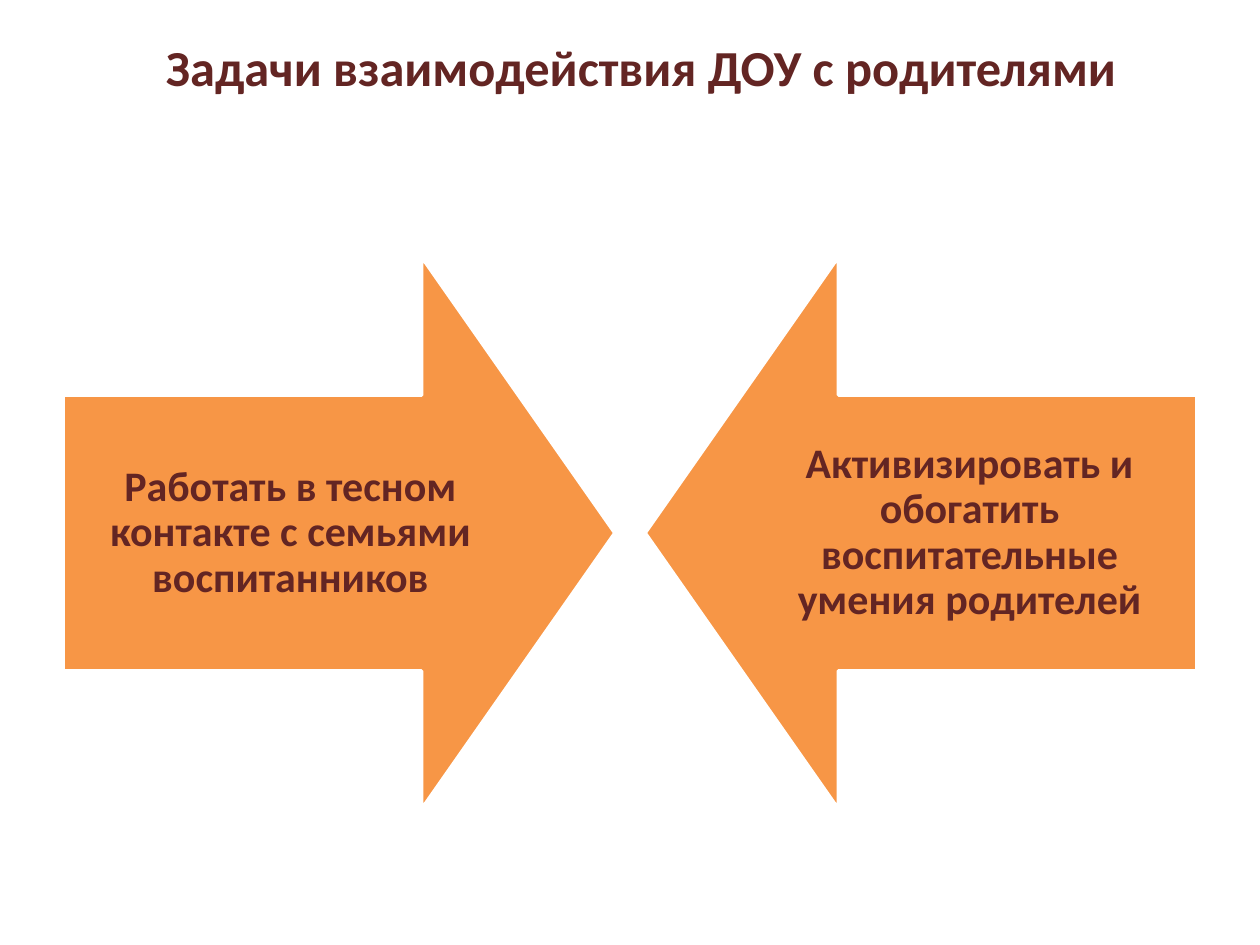
from pptx import Presentation
from pptx import util as u
from pptx.dml.color import RGBColor
from pptx.enum import shapes, text

DARK_RED = "632523"
ORANGE = "F79646"
WHITE = "FFFFFF"
ARROW_SIZE = 4.38
ARROW_TOP = 2.04
LABEL_WIDTH, LABEL_HEIGHT = 3.61, 2.19
LABEL_TOP = ARROW_TOP + (ARROW_SIZE - LABEL_HEIGHT) / 2

TASKS = [
    {"wording": "Работать в тесном контакте с семьями воспитанников",
     "arrow_left": 0.5, "label_left": 0.5, "rotation": 270},
    {"wording": "Активизировать и обогатить воспитательные умения родителей",
     "arrow_left": 5.12, "label_left": 5.89, "rotation": 90},
]


def rgb(value):
    """Return the colour for a hex string."""
    return RGBColor.from_string(value)


def apply(target, values):
    """Set every attribute in a dict of format values."""
    for name, value in values.items():
        setattr(target, name, value)


def box(left, top, width, height):
    """Return a position and size given in inches."""
    return [u.Inches(length) for length in (left, top, width, height)]


def write(frame, wording, size):
    """Fill a text frame with one centred, bold, dark red paragraph."""
    apply(frame, {"word_wrap": True, "auto_size": text.MSO_AUTO_SIZE.NONE,
                  "vertical_anchor": text.MSO_ANCHOR.MIDDLE})
    paragraph = frame.paragraphs[0]
    paragraph.alignment = text.PP_ALIGN.CENTER
    run = paragraph.add_run()
    run.text = wording
    apply(run.font, {"name": "Calibri", "size": u.Pt(size), "bold": True})
    run.font.color.rgb = rgb(DARK_RED)
    return paragraph


def add_title(slide, wording):
    """Place and format the title placeholder."""
    title = slide.shapes.title
    places = ("left", "top", "width", "height")
    apply(title, dict(zip(places, box(0.59, 0.21, 9, 0.63))))
    write(title.text_frame, wording, 28.8)


def add_arrow(slide, left, rotation):
    """Add a block arrow turned towards the slide centre."""
    arrow = slide.shapes.add_shape(shapes.MSO_SHAPE.DOWN_ARROW,
                                   *box(left, ARROW_TOP, ARROW_SIZE, ARROW_SIZE))
    arrow.rotation = rotation
    arrow.adjustments[0] = 0.5
    arrow.adjustments[1] = 0.35
    arrow.shadow.inherit = False
    arrow.fill.solid()
    arrow.fill.fore_color.rgb = rgb(ORANGE)
    arrow.line.color.rgb = rgb(WHITE)
    arrow.line.width = u.Pt(2)


def add_label(slide, left, wording):
    """Add the task wording over an arrow."""
    label = slide.shapes.add_textbox(*box(left, LABEL_TOP, LABEL_WIDTH, LABEL_HEIGHT))
    frame = label.text_frame
    sides = ("left", "top", "right", "bottom")
    apply(frame, {f"margin_{side}": u.Inches(0.19) for side in sides})
    write(frame, wording, 24).line_spacing = 0.9


def main():
    """Build and save the slide."""
    deck = Presentation()
    apply(deck, {"slide_width": u.Inches(10), "slide_height": u.Inches(7.5)})
    slide = deck.slides.add_slide(deck.slide_layouts[5])
    add_title(slide, "Задачи взаимодействия ДОУ с родителями")
    for task in TASKS:
        add_arrow(slide, task["arrow_left"], task["rotation"])
        add_label(slide, task["label_left"], task["wording"])
    deck.save("out.pptx")


if __name__ == "__main__":
    main()
